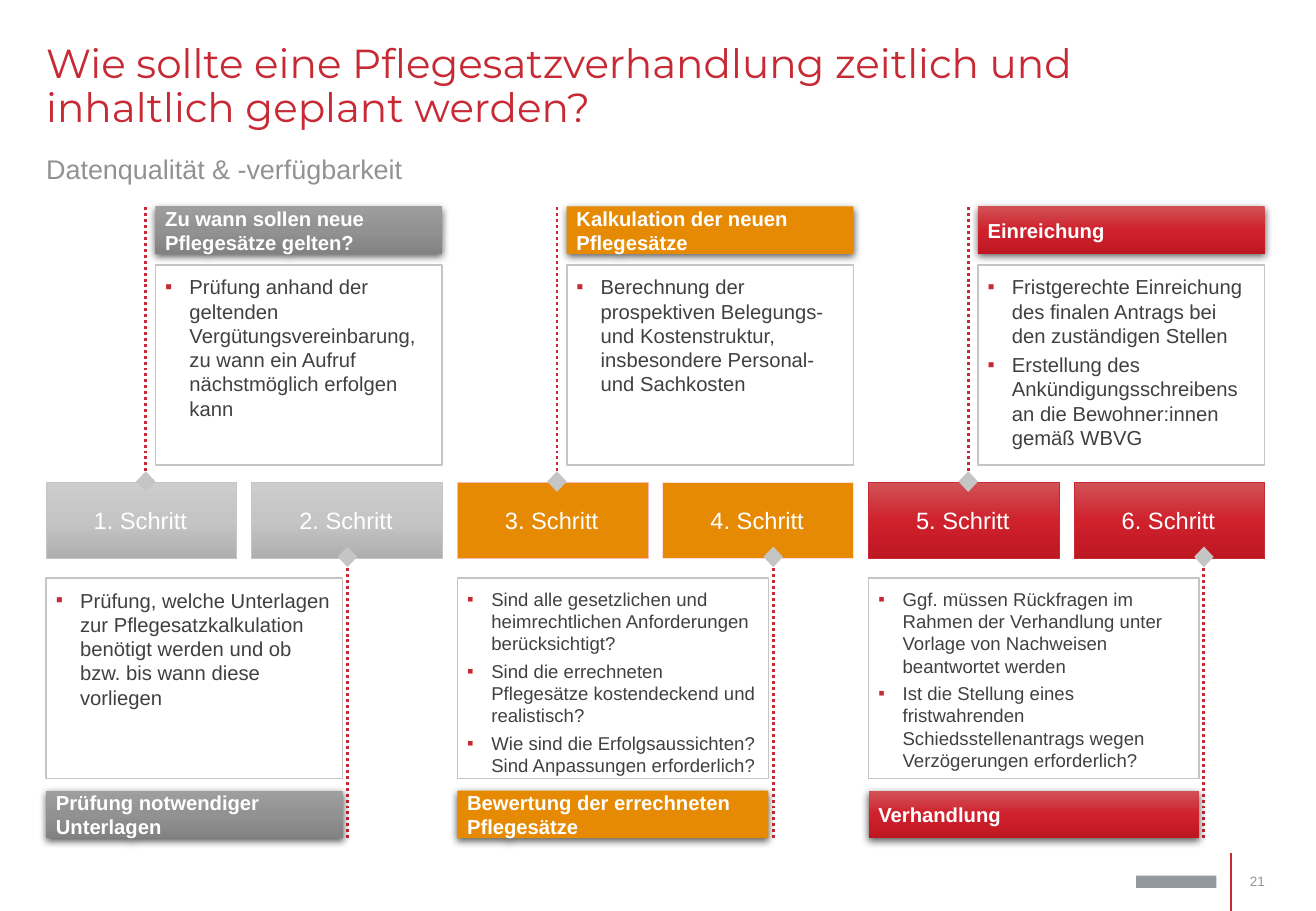
from copy import deepcopy

from lxml import etree
from pptx import Presentation
from pptx import util as u
from pptx.dml.color import RGBColor
from pptx.enum import dml, shapes, text
from pptx.oxml.ns import qn

TITLE = "Wie sollte eine Pflegesatzverhandlung zeitlich und inhaltlich geplant werden?"
SUBTITLE = "Datenqualität & -verfügbarkeit"
PAGE_NUMBER = "21"

# One entry per phase: step fill, step outlines, header fill
PHASES = [
    (("CDCDCD", "C5C5C5", "AFAFAF"), ("C5C5C5", "C5C5C5"), ("9E9E9E", "929292", "828282")),
    (("E78A03",), ("FBBAB9", "FFDFDE"), ("E78A03",)),
    (("D15256", "CF222D", "BF1722"), ("C72A34", "C72A34"), ("D15256", "CF222D", "BF1722")),
]
# One entry per phase: header, bullets
UPPER = [
    ("Zu wann sollen neue Pflegesätze gelten?",
     ["Prüfung anhand der geltenden Vergütungsvereinbarung, zu wann ein Aufruf "
      "nächstmöglich erfolgen kann"]),
    ("Kalkulation der neuen Pflegesätze",
     ["Berechnung der prospektiven Belegungs- und Kostenstruktur, insbesondere "
      "Personal- und Sachkosten"]),
    ("Einreichung",
     ["Fristgerechte Einreichung des finalen Antrags bei den zuständigen Stellen",
      "Erstellung des Ankündigungsschreibens an die Bewohner:innen gemäß WBVG"]),
]
# One entry per phase: header, bullets, width, type size
LOWER = [
    ("Prüfung notwendiger Unterlagen",
     ["Prüfung, welche Unterlagen zur Pflegesatzkalkulation benötigt werden und ob "
      "bzw. bis wann diese vorliegen"], 244, "body"),
    ("Bewertung der errechneten Pflegesätze",
     ["Sind alle gesetzlichen und heimrechtlichen Anforderungen berücksichtigt?",
      "Sind die errechneten Pflegesätze kostendeckend und realistisch?",
      "Wie sind die Erfolgsaussichten? Sind Anpassungen erforderlich?"], 256, "small"),
    ("Verhandlung",
     ["Ggf. müssen Rückfragen im Rahmen der Verhandlung unter Vorlage von Nachweisen "
      "beantwortet werden",
      "Ist die Stellung eines fristwahrenden Schiedsstellenantrags wegen Verzögerungen "
      "erforderlich?"], 272, "small"),
]

THEME = {
    "font": "Arial", "title_font": "Montserrat",
    "red": "C72A34", "grey": "C5C5C5", "subtitle": "929292", "number": "939393",
    "logo": "929A9F", "ink": "404040", "white": "FFFFFF",
    "size": {"title": 24, "subtitle": 16, "step": 14, "header": 12,
             "body": 12, "small": 11, "number": 8},
}
PX = 9144  # EMU per px, 100 px to the inch
MARGIN, STEP_PITCH, STEP_W, STEP_Y, STEP_H = 38, 169.2, 157, 397, 63
HEADER_H, BOX_H, UPPER_W = 39, 165, 236
LINE_TOP, LINE_BOTTOM = 170, 690
MARKER_W, MARKER_H = 16, 17

prs = Presentation()
prs.slide_width, prs.slide_height = 1083 * PX, 750 * PX
s = prs.slides.add_slide(prs.slide_layouts[6])


def rgb(value):
    return RGBColor.from_string(value)


def emu(*lengths):
    return [round(n * PX) for n in lengths]


def paint(sp, colors):
    """Fill with one colour, or with evenly spaced stops from top to bottom."""
    if len(colors) == 1:
        sp.fill.solid()
        sp.fill.fore_color.rgb = rgb(colors[0])
        return
    sp.fill.gradient()
    sp.fill.gradient_angle = 270
    stops = sp._element.spPr.find(".//" + qn("a:gsLst"))
    while len(stops) < len(colors):
        stops.append(deepcopy(stops[0]))
    for i, (stop, color) in enumerate(zip(sp.fill.gradient_stops, colors)):
        stop.position = i / (len(colors) - 1)
        stop.color.rgb = rgb(color)


def add_box(kind, x, y, w, h, colors, outline=None, weight=1):
    sp = s.shapes.add_shape(kind, *emu(x, y, w, h))
    sp.shadow.inherit = False
    paint(sp, colors)
    if outline:
        sp.line.color.rgb = rgb(outline)
        sp.line.width = u.Pt(weight)
    else:
        sp.line.fill.background()
    return sp


def write(sp, paragraphs, size, color, font=THEME["font"], bold=False, bullets=False,
          align=text.PP_ALIGN.LEFT, anchor=text.MSO_ANCHOR.TOP, inset=(8, 8, 8, 8),
          spacing=1.0, after=0):
    tf = sp.text_frame
    tf.word_wrap = True
    tf.vertical_anchor = anchor
    tf.margin_left, tf.margin_top, tf.margin_right, tf.margin_bottom = emu(*inset)
    for i, line in enumerate(paragraphs):
        p = tf.add_paragraph() if i else tf.paragraphs[0]
        p.alignment, p.line_spacing, p.space_after = align, spacing, u.Pt(after)
        if bullets:
            add_bullet(p)
        r = p.add_run()
        r.text = line
        r.font.name, r.font.bold = font, bold
        r.font.size = u.Pt(THEME["size"][size])
        r.font.color.rgb = rgb(color)


def add_bullet(p):
    props = p._p.get_or_add_pPr()
    props.set("marL", str(20 * PX))
    props.set("indent", str(-20 * PX))
    color = etree.SubElement(props, qn("a:buClr"))
    etree.SubElement(color, qn("a:srgbClr"), val=THEME["red"])
    etree.SubElement(props, qn("a:buFont"), typeface=THEME["font"])
    etree.SubElement(props, qn("a:buChar"), char="▪")


def add_line(x, y1, y2, weight, dash=None):
    line = s.shapes.add_connector(shapes.MSO_CONNECTOR.STRAIGHT, *emu(x, y1, x, y2))
    line.line.color.rgb = rgb(THEME["red"])
    line.line.width = u.Pt(weight)
    if dash:
        line.line.dash_style = dash
    etree.SubElement(line._element.spPr, qn("a:effectLst"))


def add_label(x, y, w, h, label, size, color, **style):
    box = s.shapes.add_textbox(*emu(x, y, w, h))
    write(box, [label], size, color, inset=(0, 0, 0, 0), **style)


def add_marker(x, y, line_from, line_to):
    """Diamond centred on x with its dotted line."""
    add_box(DIAMOND, x - MARKER_W / 2, y, MARKER_W, MARKER_H, [THEME["grey"]])
    add_line(x, line_from, line_to, 1.75, dml.MSO_LINE.ROUND_DOT)


def add_callout(x, w, header_y, box_y, colors, header, bullets, size):
    sp = add_box(RECT, x, header_y, w, HEADER_H, colors)
    effects = sp._element.spPr.find(qn("a:effectLst"))
    shadow = etree.SubElement(effects, qn("a:outerShdw"), blurRad="57150", dist="19050",
                              dir="5400000", algn="ctr", rotWithShape="0")
    black = etree.SubElement(shadow, qn("a:srgbClr"), val="000000")
    etree.SubElement(black, qn("a:alpha"), val="63000")
    write(sp, [header], "header", THEME["white"], bold=True, anchor=text.MSO_ANCHOR.MIDDLE)
    box = add_box(RECT, x, box_y, w, BOX_H, [THEME["white"]], THEME["grey"])
    write(box, bullets, size, THEME["ink"], bullets=True, after=3)


RECT, DIAMOND = shapes.MSO_SHAPE.RECTANGLE, shapes.MSO_SHAPE.DIAMOND

add_line(1013, 702, 750, 1)
add_box(RECT, 935, 721, 66, 10, [THEME["logo"]])
add_label(MARGIN, 36, 1008, 76, TITLE, "title", THEME["red"],
          font=THEME["title_font"], spacing=0.9)
add_label(MARGIN, 123, 1008, 31, SUBTITLE, "subtitle", THEME["subtitle"], spacing=1.1)

for phase, (fill, outlines, _) in enumerate(PHASES):
    for half, outline in enumerate(outlines):
        step = 2 * phase + half
        sp = add_box(RECT, MARGIN + step * STEP_PITCH, STEP_Y, STEP_W, STEP_H, fill, outline, 0.5)
        write(sp, [f"{step + 1}. Schritt"], "step", THEME["white"], after=4.2,
              align=text.PP_ALIGN.CENTER, anchor=text.MSO_ANCHOR.MIDDLE, inset=(8, 5, 10, 5))

for phase, (_, _, fill) in enumerate(PHASES):
    phase_x = MARGIN + 2 * phase * STEP_PITCH
    header, bullets = UPPER[phase]
    upper_x = phase_x + 90
    add_marker(upper_x - 8, 388, 388, LINE_TOP)
    add_callout(upper_x, UPPER_W, LINE_TOP, 218, fill, header, bullets, "body")

    header, bullets, lower_w, size = LOWER[phase]
    add_marker(phase_x + lower_w + 4, 450, LINE_BOTTOM, 468)
    add_callout(phase_x, lower_w, LINE_BOTTOM - HEADER_H, 476, fill, header, bullets, size)

add_label(1018, 716, 23, 19, PAGE_NUMBER, "number", THEME["number"],
          align=text.PP_ALIGN.RIGHT, anchor=text.MSO_ANCHOR.MIDDLE)

prs.save("out.pptx")
